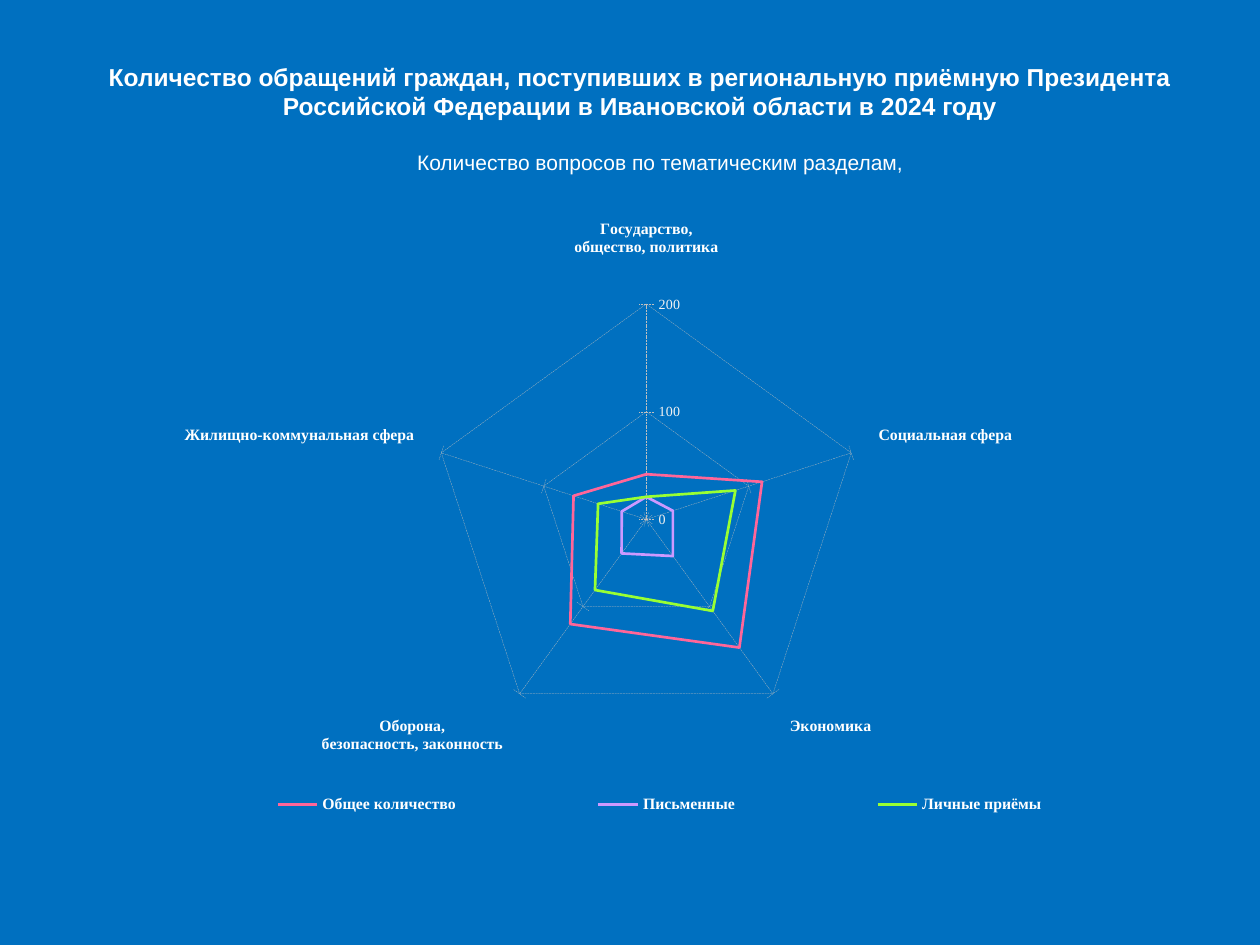
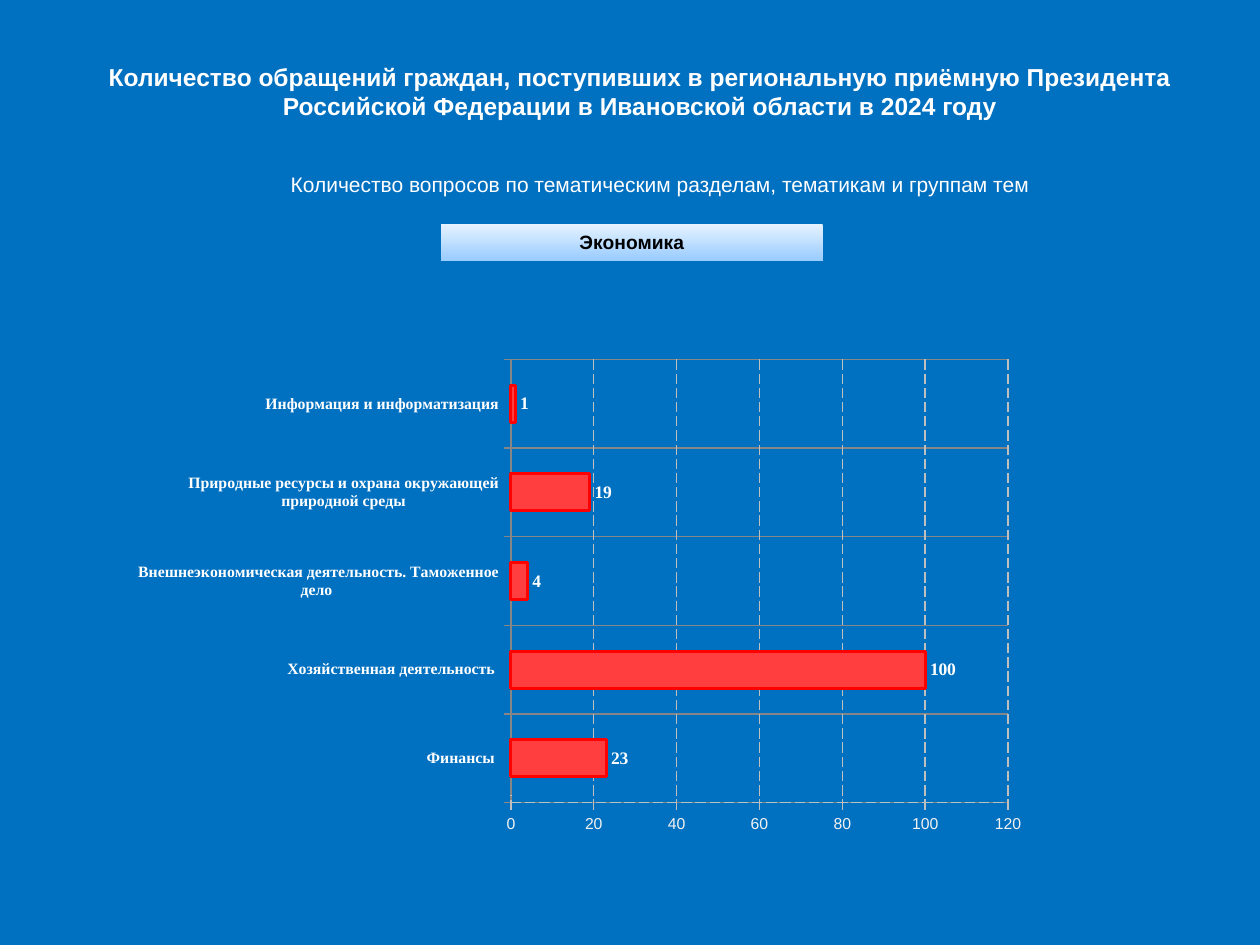
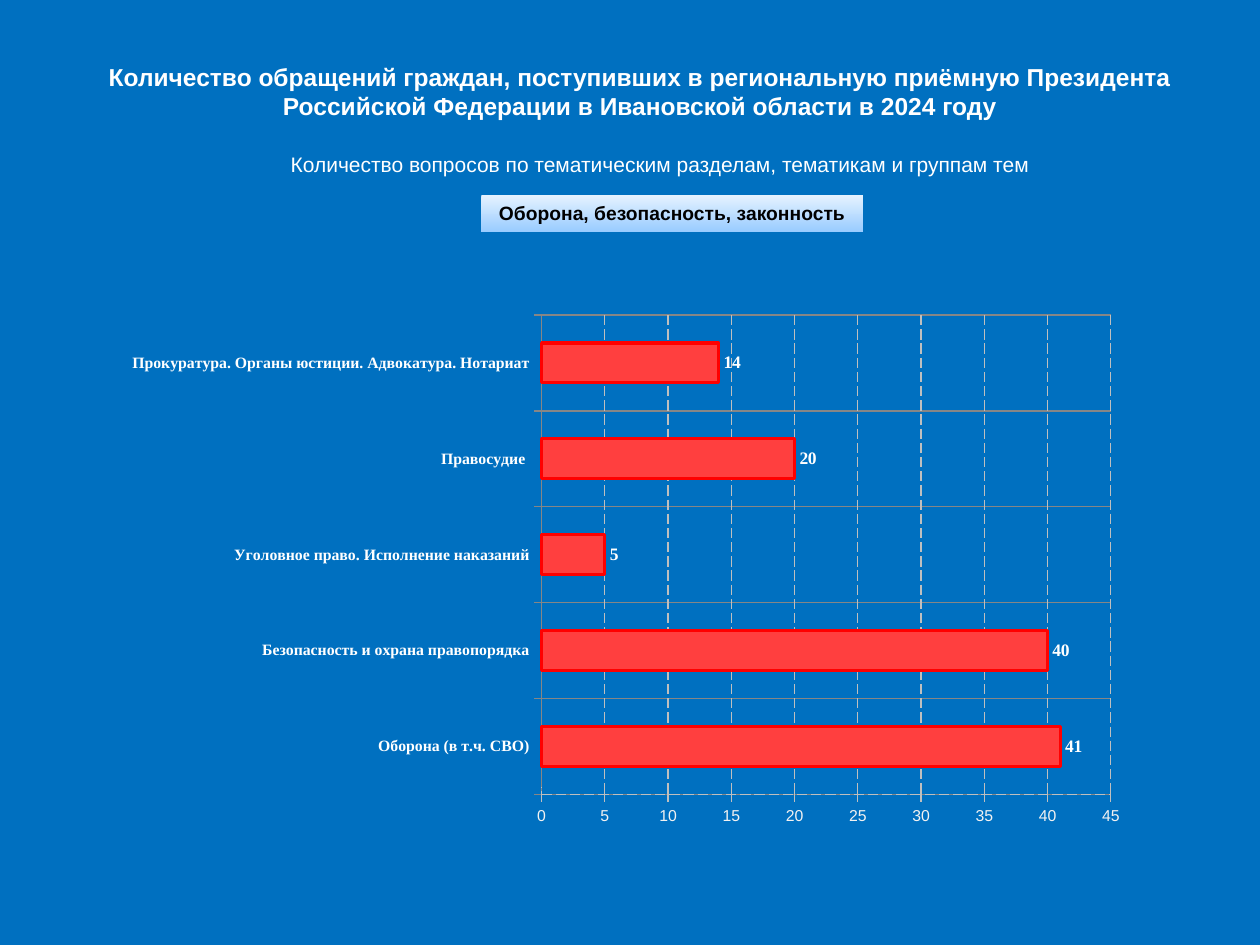
from lxml.etree import SubElement
from pptx import Presentation
from pptx.chart.data import CategoryChartData
from pptx.dml.color import RGBColor
from pptx.enum.chart import XL_CHART_TYPE, XL_LABEL_POSITION, XL_LEGEND_POSITION, XL_TICK_MARK
from pptx.enum.dml import MSO_LINE
from pptx.enum.shapes import MSO_SHAPE
from pptx.enum.text import MSO_ANCHOR, MSO_AUTO_SIZE, PP_ALIGN
from pptx.oxml.ns import qn
from pptx.util import Inches, Pt

BLUE = RGBColor(0x00, 0x70, 0xC0)
WHITE = RGBColor(0xFF, 0xFF, 0xFF)
BLACK = RGBColor(0x00, 0x00, 0x00)
PALE = RGBColor(0xF2, 0xF2, 0xF2)
SILVER = RGBColor(0xBF, 0xBF, 0xBF)
GRAY = RGBColor(0x86, 0x86, 0x86)
BAR_FILL = RGBColor(0xFF, 0x3F, 0x3F)
BAR_LINE = RGBColor(0xFF, 0x00, 0x00)
TAG_TOP = RGBColor(0xE5, 0xF2, 0xFF)
TAG_BOTTOM = RGBColor(0x99, 0xCC, 0xFF)
PINK = RGBColor(0xFF, 0x66, 0x99)
VIOLET = RGBColor(0xCC, 0x99, 0xFF)
LIME = RGBColor(0x99, 0xFF, 0x33)
SANS, SERIF = "Arial", "Times New Roman"

TITLE = ("Количество обращений граждан, поступивших в региональную приёмную Президента "
         "Российской Федерации в Ивановской области в 2024 году")
TOPICS = "Количество вопросов по тематическим разделам,"
GROUPS = TOPICS + " тематикам и группам тем"

RADAR_CATS = ["Государство,\nобщество, политика\n", "Социальная сфера", "Экономика",
              "Оборона,\nбезопасность, законность\n", "Жилищно-коммунальная сфера"]
RADAR_SERIES = [
    ("Общее количество", PINK, (42, 113, 147, 120, 71)),
    ("Письменные", VIOLET, (21, 26, 42, 39, 24)),
    ("Личные приёмы", LIME, (21, 87, 105, 81, 47)),
]
ECONOMY = {
    "Финансы ": 23,
    "Хозяйственная деятельность ": 100,
    "Внешнеэкономическая деятельность. Таможенное дело ": 4,
    "Природные ресурсы и охрана окружающей природной среды": 19,
    "Информация и информатизация": 1,
}
DEFENCE = {
    "Оборона (в т.ч. СВО)": 41,
    "Безопасность и охрана правопорядка": 40,
    "Уголовное право. Исполнение наказаний": 5,
    "Правосудие ": 20,
    "Прокуратура. Органы юстиции. Адвокатура. Нотариат": 14,
}
# subtitle, subtitle top, tag text, tag position, chart box, plot area, value axis (max, step), bars
PAGES = [
    (TOPICS, 1.14, None, None, (1.03, 1.42, 8.41, 5.28),
     (0.284, 0.188, 0.407, 0.648), (200, 100), None),
    (GROUPS, 1.31, "Экономика", (3.5, 1.78), (1.06, 2.41, 7.72, 4.57),
     (0.388, 0.097, 0.511, 0.77), (120, 20), ECONOMY),
    (GROUPS, 1.15, "Оборона, безопасность, законность", (3.82, 1.55), (0.91, 2.02, 8.43, 4.96),
     (0.402, 0.097, 0.536, 0.767), (45, 5), DEFENCE),
]


def set_font(font, size, color, bold=False, name=SANS):
    font.size, font.bold, font.name = Pt(size), bold, name
    font.color.rgb = color


def set_layout(parent, index, box, inner=False):
    """Place a chart part by fractions of the chart; index is where c:layout belongs."""
    for old in parent.findall(qn("c:layout")):
        parent.remove(old)
    layout = SubElement(parent, qn("c:layout"))
    parent.insert(index, layout)
    manual = SubElement(layout, qn("c:manualLayout"))
    settings = [("layoutTarget", "inner")] if inner else []
    settings += [("xMode", "edge"), ("yMode", "edge"), *zip("xywh", box)]
    for tag, value in settings:
        SubElement(manual, qn("c:" + tag)).set("val", str(value))


prs = Presentation()
prs.slide_width, prs.slide_height = Inches(10), Inches(7.5)

for subtitle, sub_top, tag, tag_at, chart_box, plot_box, (top_value, step), bars in PAGES:
    s = prs.slides.add_slide(prs.slide_layouts[6])
    s.background.fill.solid()
    s.background.fill.fore_color.rgb = BLUE

    # Chart data
    data = CategoryChartData()
    if bars:
        data.categories = list(bars)
        data.add_series("Series 1", bars.values())
        kind = XL_CHART_TYPE.BAR_CLUSTERED
    else:
        data.categories = RADAR_CATS
        for name, _, values in RADAR_SERIES:
            data.add_series(name, values)
        kind = XL_CHART_TYPE.RADAR
    chart = s.shapes.add_chart(kind, *map(Inches, chart_box), data).chart
    chart.has_title = False
    chart.has_legend = not bars
    set_font(chart.font, 10 if bars else 4.1, BLACK)
    plot = chart.plots[0]
    plot.vary_by_categories = False
    set_layout(chart._chartSpace.chart.plotArea, 0, plot_box, inner=True)

    # Axes
    cat, val = chart.category_axis, chart.value_axis
    val.minimum_scale, val.maximum_scale, val.major_unit = 0, top_value, step
    set_font(cat.tick_labels.font, 9, WHITE, True, SERIF)
    set_font(val.tick_labels.font, 9 if bars else 8, PALE, name=SANS if bars else SERIF)
    for axis in (cat, val):
        axis.major_tick_mark = XL_TICK_MARK.CROSS
        axis.minor_tick_mark = XL_TICK_MARK.NONE
        axis.has_major_gridlines = True
        for line in (axis.format.line, axis.major_gridlines.format.line):
            line.width = Pt(0.75 if bars else 0.13)
            if axis is val:
                line.color.rgb = SILVER
                line.dash_style = MSO_LINE.LONG_DASH
            else:
                line.color.rgb = GRAY if bars else BLACK

    # Series
    if bars:
        plot.gap_width = 140
        series = plot.series[0]
        series.format.fill.solid()
        series.format.fill.fore_color.rgb = BAR_FILL
        series.format.line.color.rgb = BAR_LINE
        series.format.line.width = Pt(1.75)
        labels = series.data_labels
        labels.show_value = True
        labels.position = XL_LABEL_POSITION.OUTSIDE_END
        set_font(labels.font, 10, WHITE, True, SERIF)
    else:
        for series, (_, color, _) in zip(plot.series, RADAR_SERIES):
            series.format.line.color.rgb = color
            series.format.line.width = Pt(1.53)
        legend = chart.legend
        legend.position = XL_LEGEND_POSITION.BOTTOM
        legend.include_in_layout = False
        set_font(legend.font, 9, WHITE, True, SERIF)
        set_layout(legend._element, 1, (0.01, 0.9, 0.98, 0.08))

    # Title and subtitle
    for text, left, top, height, size, bold in (
            (TITLE, 0.32, 0.44, 0.63, 14, True),
            (subtitle, 0.48, sub_top, 0.31, 12, False)):
        tf = s.shapes.add_textbox(Inches(left), Inches(top), Inches(9.52), Inches(height)).text_frame
        tf.word_wrap = True
        tf.text = text
        p = tf.paragraphs[0]
        p.alignment = PP_ALIGN.CENTER
        set_font(p.runs[0].font, size, WHITE, bold)

    # Section tag
    if tag:
        sp = s.shapes.add_shape(MSO_SHAPE.RECTANGLE, *map(Inches, tag_at), Inches(3.03), Inches(0.29))
        sp.shadow.inherit = False
        sp.line.fill.background()
        sp.fill.gradient()
        sp.fill.gradient_angle = 270
        for stop, color in zip(sp.fill.gradient_stops, (TAG_TOP, TAG_BOTTOM)):
            stop.color.rgb = color
        tf = sp.text_frame
        tf.word_wrap = True
        tf.auto_size = MSO_AUTO_SIZE.SHAPE_TO_FIT_TEXT
        tf.vertical_anchor = MSO_ANCHOR.TOP
        tf.text = tag
        p = tf.paragraphs[0]
        p.alignment = PP_ALIGN.CENTER
        set_font(p.runs[0].font, 11, BLACK, True)

prs.save("out.pptx")
